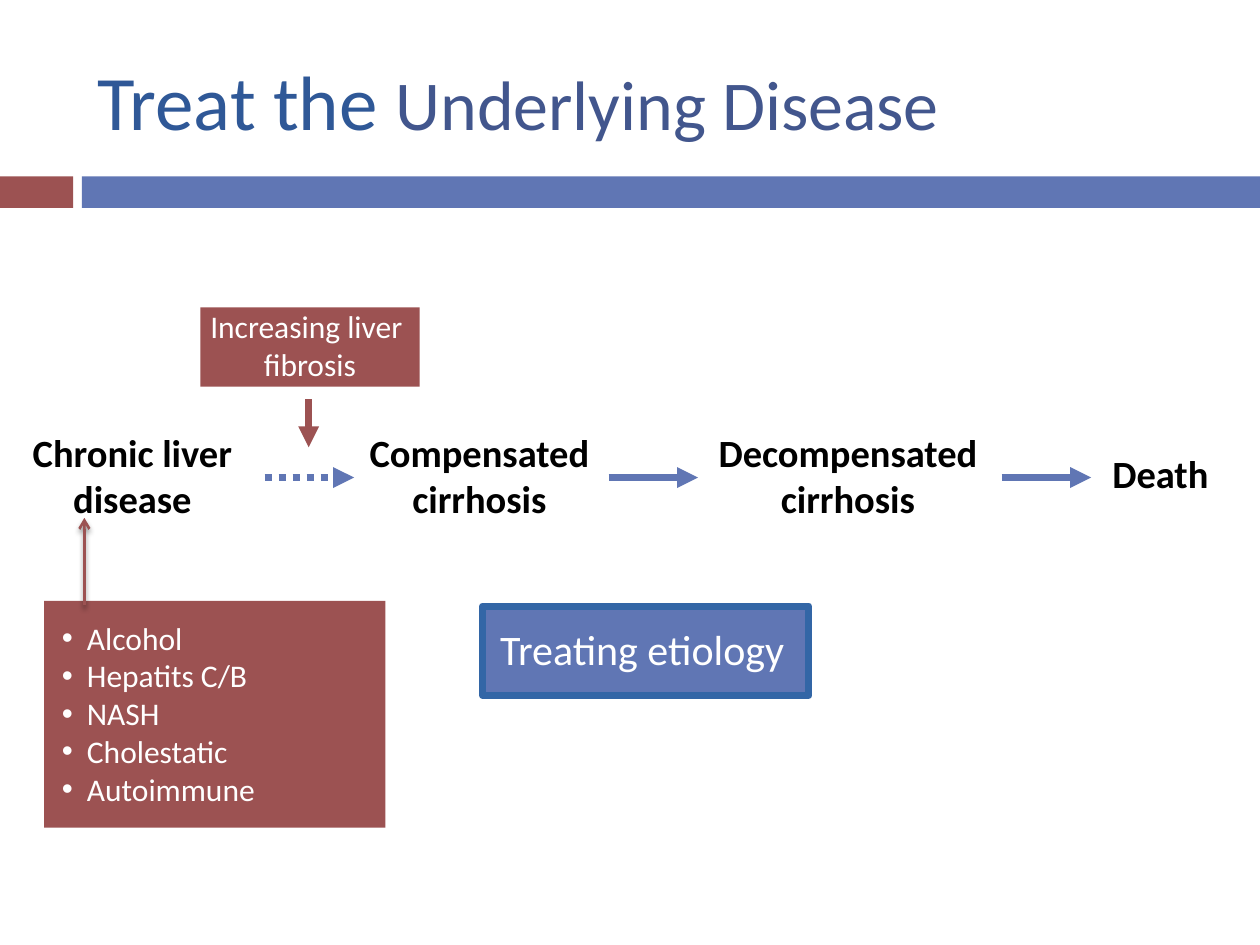
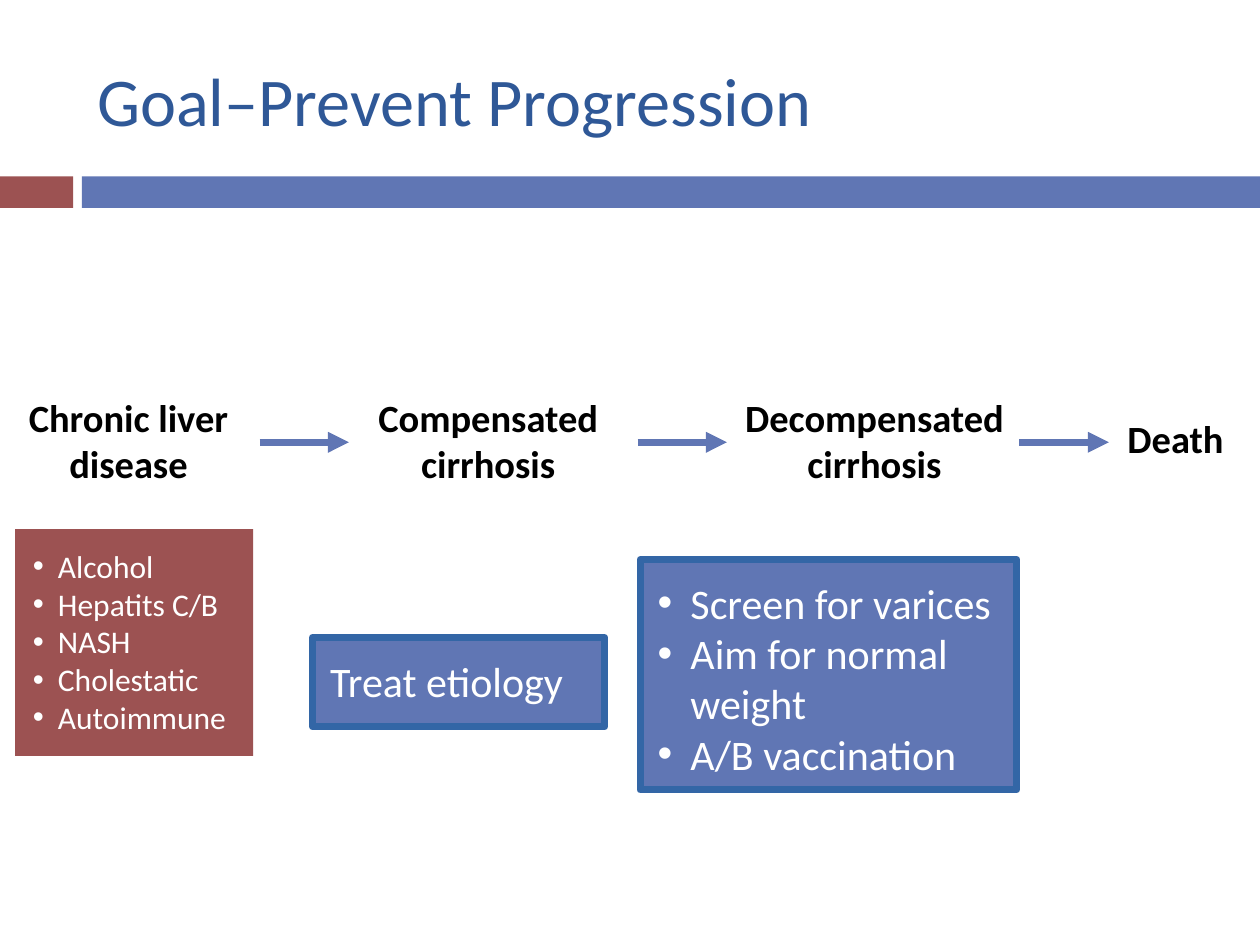
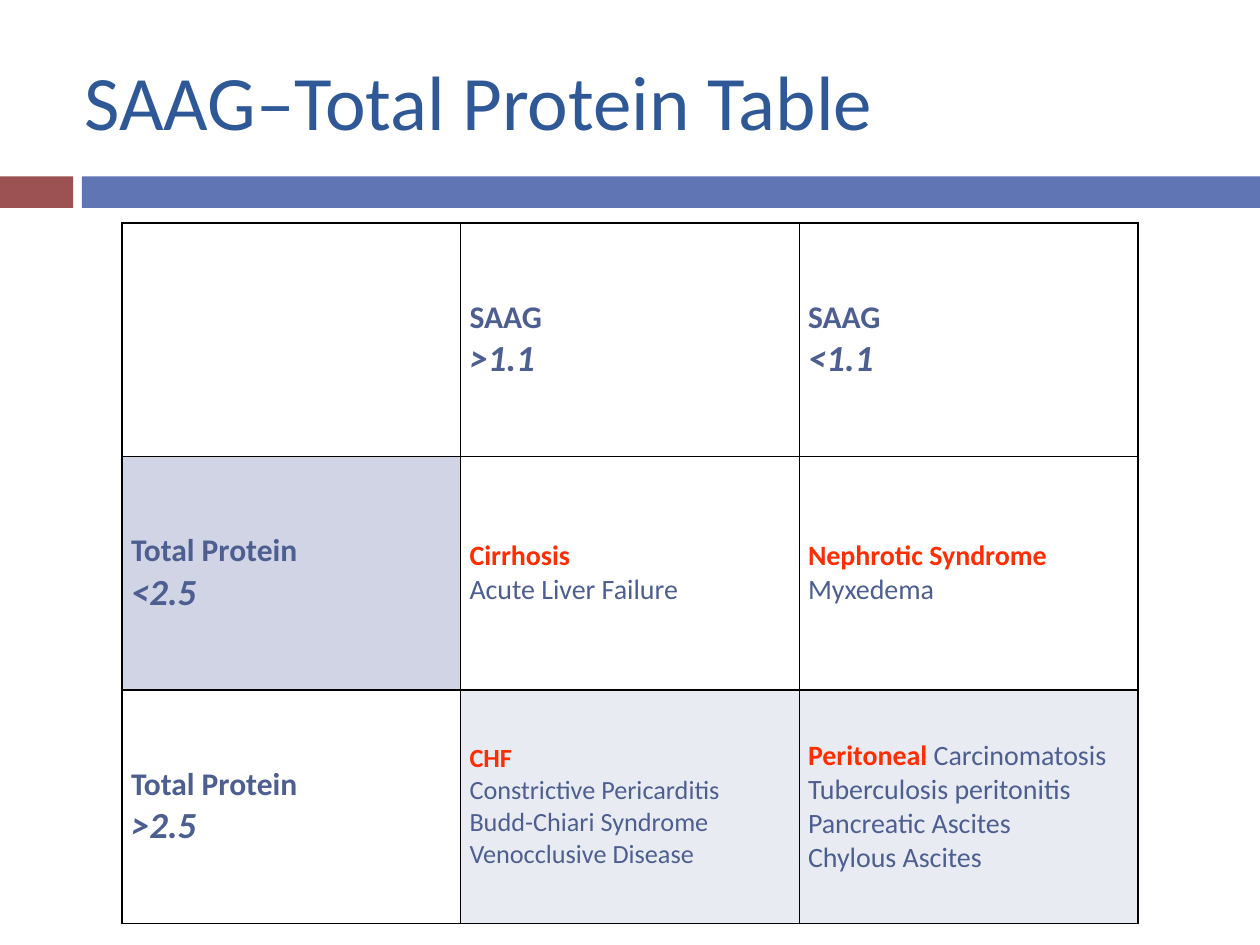
from lxml import etree
from pptx import Presentation
from pptx.dml.color import RGBColor
from pptx.enum import dml, shapes, text
from pptx.oxml.ns import qn
from pptx.util import Inches, Pt

FONT = "Calibri"
HUES = {
    "red": "9C5252", "blue": "6076B4", "edge": "3366A6", "title": "2F5897",
    "dusk": "42568D", "ink": "4D5E90", "alert": "FF2D00", "black": "000000",
    "white": "FFFFFF", "lilac": "D0D4E4", "pale": "E9EBF2",
}
BANDS = [(0, 0.58, "red"), (0.65, 9.35, "blue")]

STAGES = [["Chronic liver", "disease"], ["Compensated", "cirrhosis"],
          ["Decompensated", "cirrhosis"], ["Death"]]
CAUSES = ["Alcohol", "Hepatits C/B", "NASH", "Cholestatic", "Autoimmune"]
CARE = ["Screen for varices", "Aim for normal weight", "A/B vaccination"]

# Each title: inset and runs of (text, size, colour)
TREAT = (0.1, [("Treat the ", 44, "title"), ("Underlying Disease", 40, "dusk")])
GOAL = (0.1, [("Goal–Prevent Progression", 39, "title")])
SAAG = (0, [("SAAG–Total Protein Table", 44, "title")])

# Each flow: middle height, (left, width) of the stages, left ends of the arrows
FLOW_1 = (3.79, [(0.26, 1.88), (2.84, 1.93), (5.58, 2.3), (8.78, 0.86)],
          [2.1, 4.83, 7.95])
FLOW_2 = (3.51, [(0.12, 1.8), (2.91, 1.93), (5.83, 2.22), (8.9, 0.86)],
          [2.06, 5.06, 8.09])
STEP = 0.71

# Each cell: heading, limit or list of findings, size, fill
GRID = [
    [None, ("SAAG", ">1.1", 18, None), ("SAAG", "<1.1", 18, None)],
    [("Total Protein", "<2.5", 18, "lilac"),
     ("Cirrhosis", ["Acute Liver Failure"], 16, None),
     ("Nephrotic Syndrome", ["Myxedema"], 16, None)],
    [("Total Protein", ">2.5", 18, None),
     ("CHF", ["Constrictive Pericarditis", "Budd-Chiari Syndrome",
              "Venocclusive Disease"], 15, "pale"),
     ("Peritoneal ", ["Tuberculosis peritonitis", "Pancreatic Ascites",
                      "Chylous Ascites"], 16, "pale")],
]
TAILS = {"Peritoneal ": "Carcinomatosis"}  # plain words after a heading


def rgb(hue):
    return RGBColor.from_string(HUES[hue])


def style(font, size, hue, bold=False, slant=False):
    font.name, font.size, font.bold, font.italic = FONT, Pt(size), bold, slant
    font.color.rgb = rgb(hue)


def inset(frame, gap):
    frame.margin_left = frame.margin_right = Inches(gap)
    frame.margin_top = frame.margin_bottom = Inches(gap)


def write(frame, lines, size, hue, bold=False, align=None, hang=0):
    """Fill a frame with one paragraph a line, bulleted where hang is set."""
    for i, line in enumerate(lines):
        para = frame.paragraphs[0] if i == 0 else frame.add_paragraph()
        para.text = line
        para.alignment = align or text.PP_ALIGN.LEFT
        style(para.font, size, hue, bold)
        if hang:
            props = para._p.get_or_add_pPr()
            props.set("marL", str(Inches(hang)))
            props.set("indent", str(-Inches(hang)))
            face = etree.SubElement(props, qn("a:buFont"), typeface="Arial")
            face.addnext(etree.Element(qn("a:buChar"), char="•"))
            # Bullets come before the default run properties
            props.append(props.find(qn("a:defRPr")))if props.find(
                qn("a:defRPr")) is not None else None


def block(slide, left, top, width, high, hue, edge=None):
    box = slide.shapes.add_shape(shapes.MSO_SHAPE.RECTANGLE, Inches(left),
                                 Inches(top), Inches(width), Inches(high))
    box.shadow.inherit = False
    box.fill.solid()
    box.fill.fore_color.rgb = rgb(hue)
    if edge:
        box.line.color.rgb = rgb(edge)
        box.line.width = Pt(4)
    else:
        box.line.fill.background()
    return box


def panel(slide, spot, lines, size, hue, edge=None, hang=0):
    box = block(slide, *spot, hue, edge)
    frame = box.text_frame
    frame.word_wrap = True
    frame.vertical_anchor = text.MSO_ANCHOR.TOP
    inset(frame, 0.14)
    write(frame, lines, size, "white", hang=hang)
    frame.auto_size = text.MSO_AUTO_SIZE.SHAPE_TO_FIT_TEXT


def label(box, lines, size, hue, bold=False):
    """Centre unwrapped lines in a box without insets."""
    frame = box.text_frame
    frame.word_wrap = False
    frame.vertical_anchor = text.MSO_ANCHOR.TOP
    inset(frame, 0)
    write(frame, lines, size, hue, bold, text.PP_ALIGN.CENTER)
    frame.auto_size = text.MSO_AUTO_SIZE.SHAPE_TO_FIT_TEXT


def arrow(slide, start, end, hue, width=4, tip="triangle", dots=False,
          shade=False):
    line = slide.shapes.add_connector(
        shapes.MSO_CONNECTOR.STRAIGHT, *map(Inches, start + end))
    line.line.color.rgb = rgb(hue)
    line.line.width = Pt(width)
    if dots:
        line.line.dash_style = dml.MSO_LINE.ROUND_DOT
    props = line._element.spPr
    etree.SubElement(props.find(qn("a:ln")), qn("a:tailEnd"), type=tip)
    fx = etree.SubElement(props, qn("a:effectLst"))
    if shade:
        cast = etree.SubElement(fx, qn("a:outerShdw"), blurRad=str(Pt(3)),
                                dist=str(Pt(2.4)), dir="5400000",
                                rotWithShape="0")
        tint = etree.SubElement(cast, qn("a:srgbClr"), val=HUES["black"])
        etree.SubElement(tint, qn("a:alpha"), val="45000")


def start(deck, title):
    """Add a slide with its bands and title."""
    slide = deck.slides.add_slide(deck.slide_layouts[5])
    for left, width, hue in BANDS:
        block(slide, left, 1.4, width, 0.25, hue)
    head = slide.shapes.title
    head.left, head.top = Inches(0.67), Inches(0.25)
    head.width, head.height = Inches(8.92), Inches(1.08)
    gap, runs = title
    frame = head.text_frame
    frame.auto_size = text.MSO_AUTO_SIZE.NONE
    frame.vertical_anchor = text.MSO_ANCHOR.MIDDLE
    inset(frame, gap)
    frame.margin_top = frame.margin_bottom = Inches(gap / 2)
    para = frame.paragraphs[0]
    para.alignment = text.PP_ALIGN.LEFT
    for words, size, hue in runs:
        run = para.add_run()
        run.text = words
        style(run.font, size, hue)
    return slide


def flow(slide, plan, dots=False):
    """Draw the stages of disease and the arrows between them."""
    mid, spots, tails = plan
    boxes = []
    for lines, (left, width) in zip(STAGES, spots):
        high = 0.77 if len(lines) > 1 else 0.43
        box = slide.shapes.add_textbox(Inches(left), Inches(mid - high / 2),
                                       Inches(width), Inches(high))
        label(box, lines, 22, "black", True)
        boxes.append(box)
    for i, left in enumerate(tails):
        arrow(slide, (left, mid), (left + STEP, mid), "blue",
              dots=dots and i == 0)
    return boxes


def treat(deck):
    slide = start(deck, TREAT)
    first = flow(slide, FLOW_1, dots=True)[0]
    first.text_frame.paragraphs[0].alignment = text.PP_ALIGN.LEFT
    label(block(slide, 1.59, 2.44, 1.74, 0.63, "red"),
          ["Increasing liver ", "fibrosis"], 18, "white")
    arrow(slide, (2.45, 3.17), (2.45, 3.55), "red")
    panel(slide, (0.35, 4.77, 2.71, 1.8), CAUSES, 18, "red", hang=0.2)
    panel(slide, (3.83, 4.81, 2.59, 0.71), ["Treating etiology"], 24,
          "blue", "edge")
    arrow(slide, (0.67, 4.8), (0.67, 4.11), "red", 1.5, "arrow", shade=True)


def goal(deck):
    slide = start(deck, GOAL)
    flow(slide, FLOW_2)
    panel(slide, (0.12, 4.2, 1.89, 1.8), CAUSES, 18, "red", hang=0.2)
    panel(slide, (5.08, 4.44, 2.99, 1.83), CARE, 24, "blue", "edge", 0.26)
    panel(slide, (2.48, 5.06, 2.32, 0.71), ["Treat etiology"], 24,
          "blue", "edge")


def border(cell):
    props = cell._tc.get_or_add_tcPr()
    for i, side in enumerate(("lnL", "lnR", "lnT", "lnB")):
        line = etree.Element(qn("a:" + side), w=str(Pt(1)))
        fill = etree.SubElement(line, qn("a:solidFill"))
        etree.SubElement(fill, qn("a:srgbClr"), val=HUES["black"])
        props.insert(i, line)


def enter(cell, item):
    """Write a heading with its limit or findings into a cell."""
    name, rest, size, fill = item
    frame = cell.text_frame
    if isinstance(rest, str):
        write(frame, [name, rest], size, "ink", True)
        style(frame.paragraphs[1].font, 21, "ink", True, True)
    else:
        write(frame, [name] + rest, size, "ink")
        style(frame.paragraphs[0].runs[0].font, size, "alert", True)
        if name in TAILS:
            run = frame.paragraphs[0].add_run()
            run.text = TAILS[name]
            style(run.font, size, "ink")
    if fill:
        cell.fill.solid()
        cell.fill.fore_color.rgb = rgb(fill)


def saag(deck):
    slide = start(deck, SAAG)
    table = slide.shapes.add_table(3, 3, Inches(0.97), Inches(1.77),
                                   Inches(8.06), Inches(5.56)).table
    table.first_row = table.horz_banding = False
    for r, row in enumerate(GRID):
        for c, item in enumerate(row):
            cell = table.cell(r, c)
            cell.vertical_anchor = text.MSO_ANCHOR.MIDDLE
            inset(cell, 0.07)
            cell.fill.background()
            if item:
                enter(cell, item)
            border(cell)


def main():
    deck = Presentation()
    deck.slide_width, deck.slide_height = Inches(10), Inches(7.5)
    for build in (treat, goal, saag):
        build(deck)
    deck.save("out.pptx")


if __name__ == "__main__":
    main()
